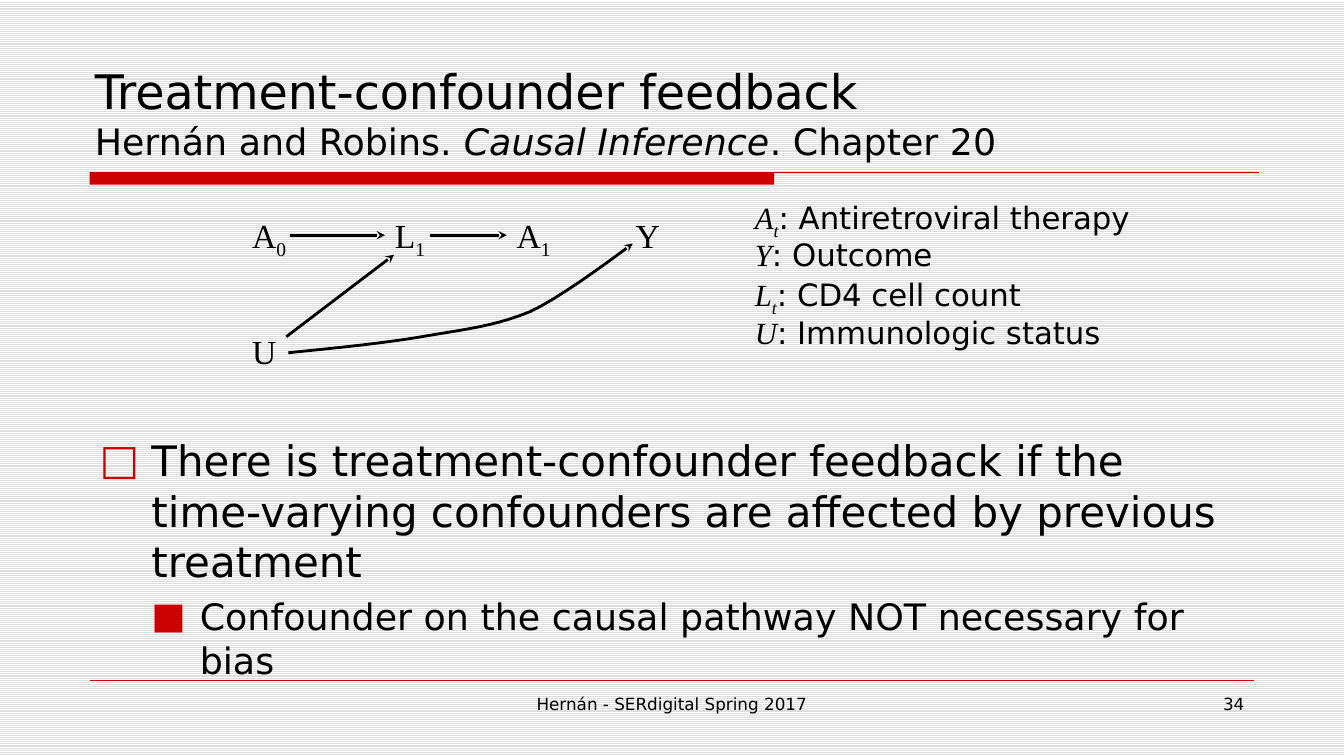
from lxml import etree
from pptx import Presentation
from pptx.dml.color import RGBColor
from pptx.enum.dml import MSO_PATTERN
from pptx.enum.shapes import MSO_CONNECTOR, MSO_SHAPE
from pptx.enum.text import MSO_ANCHOR, MSO_AUTO_SIZE, PP_ALIGN
from pptx.oxml.ns import qn
from pptx.util import Pt

LINED = MSO_PATTERN.LIGHT_HORIZONTAL
STRAIGHT = MSO_CONNECTOR.STRAIGHT
RECT = MSO_SHAPE.RECTANGLE
TOP, BOTTOM = MSO_ANCHOR.TOP, MSO_ANCHOR.BOTTOM
FIXED = MSO_AUTO_SIZE.NONE
LEFT, CENTER, RIGHT = PP_ALIGN.LEFT, PP_ALIGN.CENTER, PP_ALIGN.RIGHT
SANS, SERIF = "DejaVu Sans", "Times New Roman"
BLACK, RED, WHITE, GRAY = "000000", "CC0000", "FFFFFF", "DDDDDD"
GAP = 0.23


def color(target, code):
    target.rgb = RGBColor.from_string(code)


def add_run(para, text, size, face=SANS, slant=False, sub=False):
    run = para.add_run()
    run.text = text
    font = run.font
    font.size, font.name, font.italic = Pt(size), face, slant
    color(font.color, BLACK)
    if sub:
        font._element.set("baseline", "-25000")


def place(shape, box, anchor=TOP):
    shape.left, shape.top, shape.width, shape.height = map(Pt, box)
    frame = shape.text_frame
    frame.word_wrap = True
    frame.auto_size = FIXED
    frame.vertical_anchor = anchor
    return frame


def add_label(slide, box, align=LEFT):
    shape = slide.shapes.add_textbox(*map(Pt, box))
    para = place(shape, box).paragraphs[0]
    para.alignment = align
    return shape, para


def add_para(frame, first, size, margin, hang, mark=None):
    para = frame.paragraphs[0] if first else frame.add_paragraph()
    para.alignment = LEFT
    para.space_before = Pt(round(GAP * size, 1))
    props = para._element.get_or_add_pPr()
    props.set("marL", str(Pt(margin)))
    props.set("indent", str(Pt(-hang)))
    if mark:
        tint = etree.SubElement(props, qn("a:buClr"))
        etree.SubElement(tint, qn("a:srgbClr"), val=RED)
        etree.SubElement(props, qn("a:buFont"), typeface=SANS)
        etree.SubElement(props, qn("a:buChar"), char=mark)
    else:
        etree.SubElement(props, qn("a:buNone"))
    return para


def stroke(shape, code, width, head=False):
    color(shape.line.color, code)
    shape.line.width = Pt(width)
    if head:
        edge = shape._element.spPr.find(qn("a:ln"))
        etree.SubElement(edge, qn("a:tailEnd"), type="stealth")


def add_line(slide, start, end, code, width, head=False):
    line = slide.shapes.add_connector(STRAIGHT, *map(Pt, start + end))
    stroke(line, code, width, head)
    etree.SubElement(line._element.spPr, qn("a:effectLst"))
    return line


def bezier(ends, steps=10):
    a, b, c, d = ends
    for step in range(1, steps + 1):
        t = step / steps
        s = 1 - t
        yield tuple(s**3 * p + 3 * s * s * t * q + 3 * s * t * t * r + t**3 * v
                    for p, q, r, v in zip(a, b, c, d))


def add_curve(slide, knots):
    points = [spot for i in range(0, len(knots) - 1, 3)
              for spot in bezier(knots[i:i + 4])]
    pen = slide.shapes.build_freeform(*map(Pt, knots[0]))
    pen.add_line_segments([(Pt(x), Pt(y)) for x, y in points], close=False)
    curve = pen.convert_to_shape()
    curve.fill.background()
    curve.shadow.inherit = False
    stroke(curve, BLACK, 2, True)


def add_frame(slide, box):
    left, top, width, height = box
    fill = slide.background.fill
    fill.patterned()
    fill.pattern = LINED
    color(fill.fore_color, GRAY)
    color(fill.back_color, WHITE)
    bar = slide.shapes.add_shape(RECT, Pt(left), Pt(top), Pt(489), Pt(9))
    bar.fill.solid()
    color(bar.fill.fore_color, RED)
    bar.line.fill.background()
    bar.shadow.inherit = False
    right, base = left + width, top + height
    add_line(slide, (left, top), (right, top), RED, 0.75)
    add_line(slide, (left, base), (right - 3, base), RED, 0.25)
    foot = add_label(slide, (left + 264, base + 6, 304, 37), CENTER)[1]
    add_run(foot, "Hernán - SERdigital Spring 2017", 12)
    page = add_label(slide, (right - 211, base + 6, 208, 37), RIGHT)[1]
    add_run(page, "34", 12)


def add_title(slide, box):
    para = place(slide.shapes.title, box, BOTTOM).paragraphs[0]
    para.alignment = LEFT
    add_run(para, "Treatment-confounder feedback", 34)
    para.add_line_break()
    add_run(para, "Hernán and Robins. ", 26)
    add_run(para, "Causal Inference", 26, slant=True)
    add_run(para, ". Chapter 20", 26)


def add_legend(slide, box):
    frame = place(slide.placeholders[1], box)
    terms = [("A", "t", "Antiretroviral therapy"), ("Y", "", "Outcome"),
             ("L", "t", "CD4 cell count"), ("U", "", "Immunologic status")]
    for i, (name, sub, text) in enumerate(terms):
        para = add_para(frame, i == 0, 22, 37, 37)
        para.line_spacing = 0.8
        add_run(para, name, 22, SERIF, True)
        if sub:
            add_run(para, sub, 22, SERIF, True, True)
        add_run(para, ": " + text, 22)


def add_graph(slide, box):
    left, top = box[:2]

    def shift(x, y):
        return left + x, top + y

    nodes = {}
    for name, sub, x, y in [("A", "0", 0, 0), ("L", "1", 102, 0), ("A", "1", 189, 0),
                            ("Y", "", 274, 0), ("U", "", 0, 83)]:
        shape, para = add_label(slide, shift(x, y) + (51, 36))
        add_run(para, name, 24, SERIF)
        if sub:
            add_run(para, sub, 24, SERIF, sub=True)
        nodes[name + sub] = shape
    for x, goal, end in [(34, "L1", 102), (134, "A1", 189)]:
        line = add_line(slide, shift(x, 18), shift(end, 18), BLACK, 2, True)
        line.end_connect(nodes[goal], 1)
    add_line(slide, shift(31.5, 90.5), shift(108.5, 32), BLACK, 2, True)
    knots = [(33, 102), (67.5, 98.5), (103, 95), (131.5, 90), (160.5, 85),
             (180.5, 83), (206, 72.5), (230, 61.5), (279, 24), (279, 24)]
    add_curve(slide, [shift(x, y) for x, y in knots])


def add_points(slide, box):
    frame = place(slide.placeholders[2], box)
    para = add_para(frame, True, 30, 37, 37, "□")
    add_run(para, "There is treatment-confounder feedback if the time-varying "
            "confounders are affected by previous treatment", 30)
    para = add_para(frame, False, 26, 71.5, 34.5, "■")
    para.level = 1
    add_run(para, "Confounder on the causal pathway NOT necessary for bias", 26)


def main():
    deck = Presentation()
    deck.slide_width, deck.slide_height = Pt(960), Pt(540)
    slide = deck.slides.add_slide(deck.slide_layouts[3])
    add_frame(slide, (64, 123, 835, 363))
    add_title(slide, (60.5, 24, 840, 96))
    add_legend(slide, (532, 141, 315, 185))
    add_graph(slide, (173, 150, 325, 119))
    add_points(slide, (64, 307, 830, 168))
    deck.save("out.pptx")


if __name__ == "__main__":
    main()
